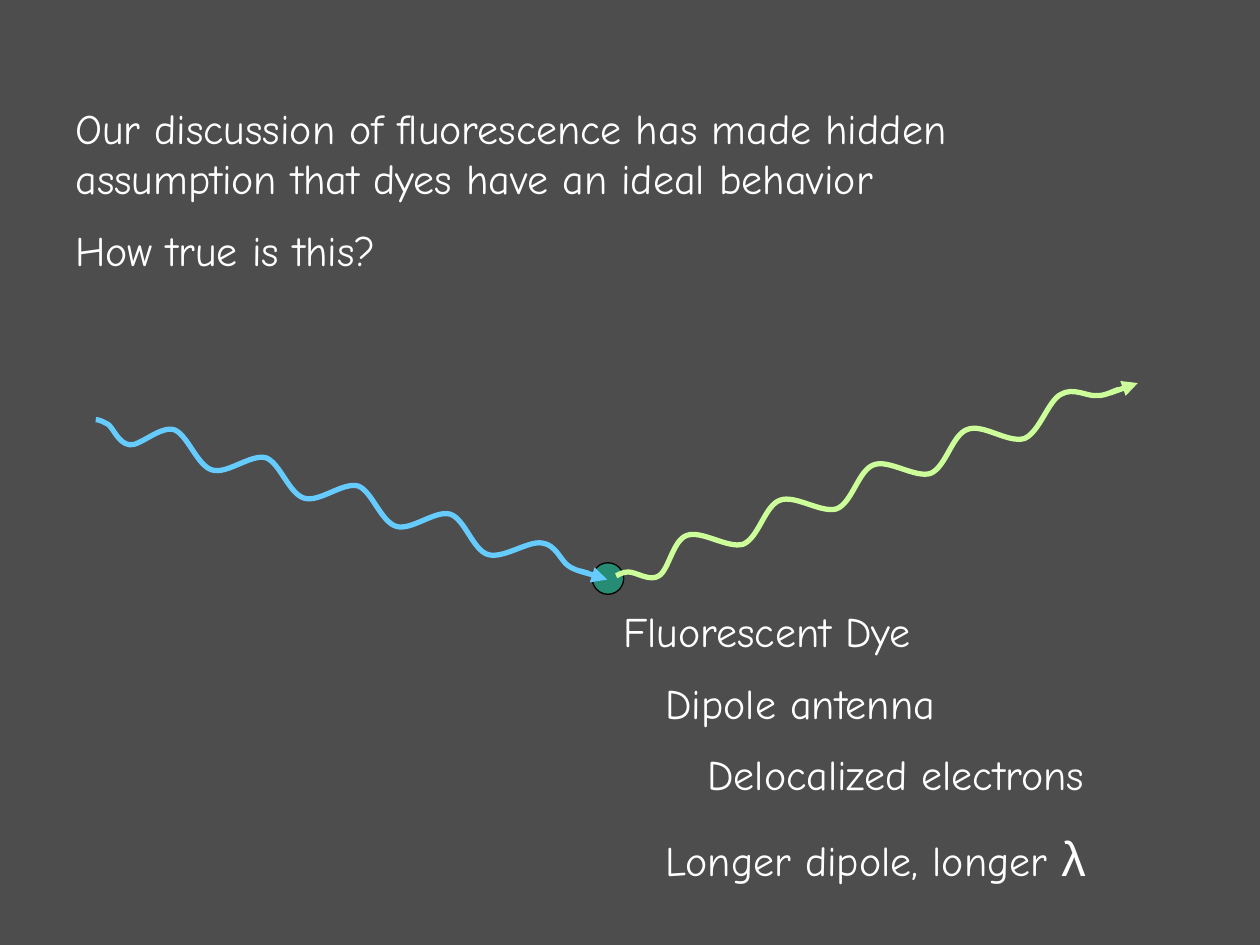
from lxml.etree import SubElement
from pptx import Presentation
from pptx.dml.color import RGBColor
from pptx.enum.shapes import MSO_CONNECTOR, MSO_SHAPE
from pptx.enum.text import MSO_ANCHOR
from pptx.oxml.ns import qn
from pptx.util import Pt

GREY = RGBColor(0x4D, 0x4D, 0x4D)
WHITE = RGBColor(0xFF, 0xFF, 0xFF)
BLACK = RGBColor(0x00, 0x00, 0x00)
TEAL = RGBColor(0x00, 0xCC, 0x99)
BLUE = RGBColor(0x66, 0xCC, 0xFF)
LIME = RGBColor(0xCC, 0xFF, 0x99)
FONT = "Comic Neue"

BLUE_WAVE = dict(
    head=[(0, 0), (1.5, 0), (3.6, 0.7), (7.2, 2.8), (10.1, 5), (13, 13.6),
          (19.5, 14.4), (25.2, 15.1), (36.7, 3.6), (44.7, 5.7)],
    cycle=[(7.9, 2.9), (13, 20.2), (21.6, 23), (30.2, 25.9), (43.9, 13.7), (52.6, 16.1)],
    tail=[(211, 56.8), (215.3, 74.1), (223.9, 77), (232.6, 79.9), (247, 69.1),
          (254.9, 70.5), (262.8, 71.2), (265.7, 80.6), (270, 83.5), (274.3, 86.4),
          (278.7, 87.1), (281.5, 87.8)],
    arrow=[(276.5, 86.4), (292.3, 91.4)],
)
LIME_WAVE = dict(
    head=[(0, 0), (0.7, 0), (2.8, -2.1), (7.2, -2.1), (11.5, -2.1), (19.4, 3.6),
          (24.5, 0), (30.2, -3.6), (32.4, -20.1), (40.3, -23)],
    cycle=[(8.4, -3.2), (23.4, 7.6), (32.2, 5), (41.3, 1.4), (44.6, -17.3), (53.5, -20.2)],
    tail=[(209.5, -87.1), (223.9, -75.6), (233.3, -78.4), (241.9, -82), (246.9, -100),
          (254.1, -103.6), (261.3, -108), (269.3, -102.2), (275, -102.9), (280.1, -102.9),
          (284.4, -105.8), (287.3, -106.5)],
    arrow=[(282.2, -104.4), (298.1, -110.1)],
)


def add_dye(slide, left, top, size):
    dye = slide.shapes.add_shape(MSO_SHAPE.OVAL, Pt(left), Pt(top), Pt(size), Pt(size))
    dye.shadow.inherit = False
    dye.fill.solid()
    dye.fill.fore_color.rgb = TEAL
    tint = dye.fill._xPr.find(qn("a:solidFill"))[0]
    SubElement(tint, qn("a:alpha"), val="50000")
    dye.line.color.rgb = BLACK
    dye.line.width = Pt(0.75)


def add_text(slide, left, top, width, height, lines):
    box = slide.shapes.add_textbox(Pt(left), Pt(top), Pt(width), Pt(height))
    frame = box.text_frame
    frame.word_wrap = True
    frame.vertical_anchor = MSO_ANCHOR.MIDDLE
    for i, (indent, gap, runs) in enumerate(lines):
        para = frame.paragraphs[0] if i == 0 else frame.add_paragraph()
        para.space_before = Pt(gap)
        para._p.get_or_add_pPr().set("marL", str(Pt(indent)))
        for text, font, size in runs:
            run = para.add_run()
            run.text = text
            run.font.name = font
            run.font.size = Pt(size)
            run.font.color.rgb = WHITE


def bend(curve):
    route = curve._element.find(".//" + qn("a:path"))
    steps = route.findall(qn("a:lnTo"))
    for i in range(0, len(steps), 3):
        arc = SubElement(route, qn("a:cubicBezTo"))
        for step in steps[i:i + 3]:
            arc.append(step[0])
            route.remove(step)


def add_wave(slide, left, top, color, head, cycle, tail, arrow):
    x, y = head[-1]
    dx, dy = cycle[-1]
    body = [(x + n * dx + u, y + n * dy + v) for n in range(3) for u, v in cycle]
    spots = [(Pt(left + u), Pt(top + v)) for u, v in head + body + tail]
    pen = slide.shapes.build_freeform(*spots[0])
    pen.add_line_segments(spots[1:], close=False)
    curve = pen.convert_to_shape()
    bend(curve)
    curve.shadow.inherit = False
    curve.fill.background()

    ends = [Pt(base + part) for spot in arrow for base, part in zip((left, top), spot)]
    tip = slide.shapes.add_connector(MSO_CONNECTOR.STRAIGHT, *ends)
    for shape in (curve, tip):
        shape.line.color.rgb = color
        shape.line.width = Pt(3)
    SubElement(tip.line._get_or_add_ln(), qn("a:tailEnd"), type="triangle")
    SubElement(tip._element.spPr, qn("a:effectLst"))


def main():
    deck = Presentation()
    deck.slide_width, deck.slide_height = Pt(720), Pt(540)
    slide = deck.slides.add_slide(deck.slide_layouts[6])
    slide.background.fill.solid()
    slide.background.fill.fore_color.rgb = GREY

    add_dye(slide, 338.4, 321.6, 18)
    add_text(slide, 36, 45.4, 594, 124.5, [
        (0, 0, [("Our discussion of fluorescence has made hidden assumption "
                 "that dyes have an ideal behavior", FONT, 24)]),
        (0, 12, [("How true is this?", FONT, 24)]),
    ])
    add_wave(slide, 54.7, 239.8, BLUE, **BLUE_WAVE)
    add_wave(slide, 352.1, 329, LIME, **LIME_WAVE)
    add_text(slide, 349.2, 330.5, 341.3, 191.5, [
        (0, 0, [("Fluorescent Dye", FONT, 24)]),
        (24, 12, [("Dipole antenna", FONT, 24)]),
        (48, 12, [("Delocalized electrons", FONT, 24)]),
        (24, 16, [("Longer dipole, longer ", FONT, 24), ("λ", "Arial", 28)]),
    ])
    deck.save("out.pptx")


if __name__ == "__main__":
    main()
